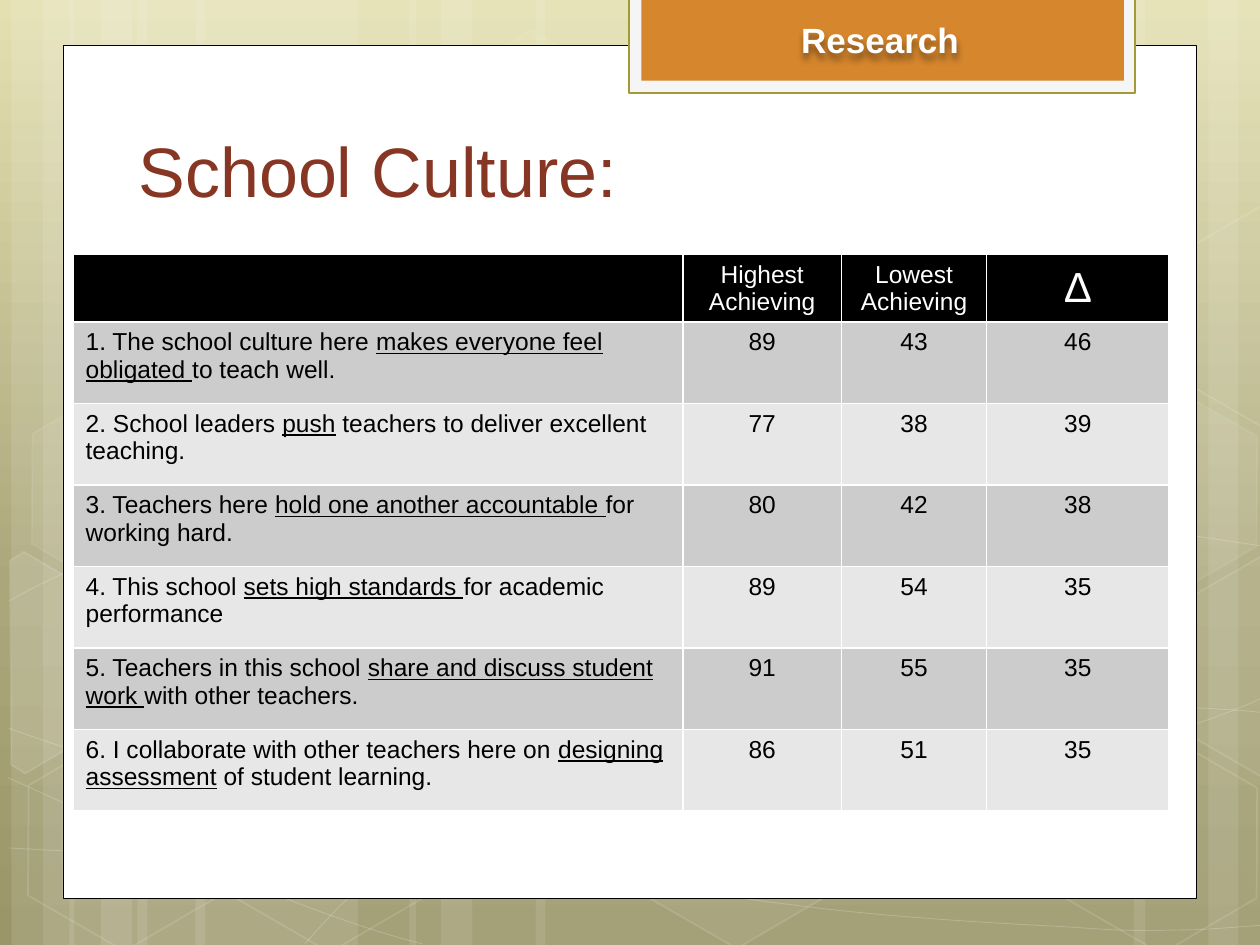
from copy import deepcopy

from lxml import etree
from pptx import Presentation
from pptx.dml.color import RGBColor
from pptx.enum.shapes import MSO_SHAPE
from pptx.enum.text import MSO_ANCHOR, MSO_AUTO_SIZE, PP_ALIGN
from pptx.oxml.ns import qn
from pptx.util import Inches, Pt

RECTANGLE, HEXAGON = MSO_SHAPE.RECTANGLE, MSO_SHAPE.HEXAGON
LEFT, CENTER = PP_ALIGN.LEFT, PP_ALIGN.CENTER
MIDDLE, BOTTOM = MSO_ANCHOR.MIDDLE, MSO_ANCHOR.BOTTOM
NO_AUTOFIT = MSO_AUTO_SIZE.NONE
FONT = "Arial"
WHITE, BLACK = "FFFFFF", "000000"
BANDS = ("CCCCCC", "E7E7E7")

SKY = ((0, "E4E0B2"), (0.62, "ABA77B"), (1, "9A9669"))
STRIPES = (
    (1.09, 1.75), (0.09, 0.5), (0.34, 0.83), (1.55, 1.75), (0.55, 0.5), (0.8, 0.83),
    (7.34, 1.75), (9.59, 0.5), (9, 0.83), (4.25, 3.09), (3.25, 0.5), (3.5, 0.83),
)
CURVES = (
    ((0.07, 6.73), (0.61, 6.76), (1.15, 6.79), (1.9, 6.78), (2.65, 6.77), (3.58, 6.75),
     (4.58, 6.65), (5.58, 6.55), (7, 6.36), (7.92, 6.17), (8.83, 5.98), (9.77, 5.68),
     (10.07, 5.51)),
    ((0.07, 4.77), (0.36, 4.61), (0.65, 4.46), (1.21, 4.31), (1.78, 4.16), (2.59, 3.94),
     (3.47, 3.87), (4.36, 3.8), (5.44, 3.79), (6.54, 3.87), (7.64, 3.95), (9.47, 4.26),
     (10.07, 4.34)),
    ((0.06, 6.17), (1.27, 6.72), (2.47, 7.27), (3.35, 7.49)),
    ((0.07, 5.78), (0.38, 5.89), (0.7, 6), (1.28, 6.16), (1.86, 6.31), (2.73, 6.56),
     (3.57, 6.73), (4.4, 6.9), (5.45, 7.08), (6.28, 7.18), (7.11, 7.29), (8, 7.33),
     (8.53, 7.36), (9.06, 7.4), (9.19, 7.38), (9.45, 7.38), (9.71, 7.37), (9.89, 7.35),
     (10.07, 7.34)),
    ((2.42, 7.49), (2.6, 7.29), (2.78, 7.09), (3.02, 6.91), (3.26, 6.72), (3.6, 6.53),
     (3.88, 6.39), (4.16, 6.25), (4.33, 6.19), (4.69, 6.09), (5.06, 5.99), (5.73, 5.85),
     (6.08, 5.78), (6.44, 5.71), (6.49, 5.71), (6.8, 5.69), (7.11, 5.66), (7.6, 5.63),
     (7.94, 5.62), (8.29, 5.61), (8.86, 5.62), (8.86, 5.62), (8.86, 5.62), (9.53, 5.62),
     (9.53, 5.62), (9.71, 5.63), (9.88, 5.64), (9.97, 5.65), (10.06, 5.66), (10.03, 5.65),
     (10.06, 5.66)),
)
HEXAGONS = (
    (3.34, 0.36, 4, 8), (4.97, 5.89, 6, 12), (0.11, 5.91, None, 12), (0.14, 3.12, 7, 8),
    (1.74, 5.92, None, 12), (7.53, 4.53, 10, 12), (8.34, 5.93, None, 12), (8.34, 3.14, 7, 8),
)
CUT_HEXAGONS = (
    (((0.08, 4.45), (0.19, 4.38), (0.96, 4.83), (0.95, 5.7), (0.2, 6.14), (0.09, 6.07)), 10),
    (((9.26, 4.85), (10.02, 4.41), (10.09, 4.46), (10.09, 6.13), (10.02, 6.17), (9.26, 5.73)), 4),
    (((9.26, 2.07), (10.02, 1.63), (10.1, 1.68), (10.09, 3.35), (10.02, 3.39), (9.26, 2.95)), None),
)
COLUMN_WIDTHS = (4.84, 1.26, 1.15, 1.45)
HEADER_HEIGHT, BODY_HEIGHT = 0.53, 3.88
HEADINGS = ("", "Highest\nAchieving", "Lowest\nAchieving", "∆")
FINDINGS = (
    (("1. The school culture here ", "makes everyone feel obligated ", "to teach well."), 89, 43, 46),
    (("2. School leaders ", "push", " teachers to deliver excellent teaching."), 77, 38, 39),
    (("3. Teachers here ", "hold one another accountable ", "for working hard."), 80, 42, 38),
    (("4. This school ", "sets high standards ", "for academic performance"), 89, 54, 35),
    (("5. Teachers in this school ", "share and discuss student work ", "with other teachers."), 91, 55, 35),
    (("6. I collaborate with other teachers here on ", "designing assessment", " of student learning."), 86, 51, 35),
)


def rgb(value):
    return RGBColor.from_string(value)


def set_opacity(shape, route, percent):
    color = shape.element.spPr.find("/".join(qn(tag) for tag in route))
    etree.SubElement(color, qn("a:alpha"), val=str(percent * 1000))


def paint(shape, fill=None, fill_opacity=100, line=None, width=1, line_opacity=100):
    shape.shadow.inherit = False
    if fill:
        shape.fill.solid()
        shape.fill.fore_color.rgb = rgb(fill)
        if fill_opacity < 100:
            set_opacity(shape, ("a:solidFill", "a:srgbClr"), fill_opacity)
    else:
        shape.fill.background()
    if line:
        shape.line.color.rgb = rgb(line)
        shape.line.width = Pt(width)
        if line_opacity < 100:
            set_opacity(shape, ("a:ln", "a:solidFill", "a:srgbClr"), line_opacity)
    else:
        shape.line.fill.background()


def add_preset(slide, kind, box, **look):
    shape = slide.shapes.add_shape(kind, *map(Inches, box))
    paint(shape, **look)
    return shape


def add_outline(slide, points, closed, **look):
    start, *rest = [(Inches(x), Inches(y)) for x, y in points]
    builder = slide.shapes.build_freeform(*start)
    builder.add_line_segments(rest, close=closed)
    outline = builder.convert_to_shape()
    paint(outline, **look)
    return outline


def add_curve(slide, points):
    curve = add_outline(slide, points, False, line=WHITE, width=0.5, line_opacity=20)
    segments = curve.element.findall(".//" + qn("a:lnTo"))
    for first in range(0, len(segments), 3):
        bezier = etree.SubElement(segments[first].getparent(), qn("a:cubicBezTo"))
        for segment in segments[first:first + 3]:
            bezier.append(segment[0])
            segment.getparent().remove(segment)


def style(paragraph, size, color, alignment=LEFT, bold=False):
    paragraph.alignment = alignment
    paragraph.font.name = FONT
    paragraph.font.size = Pt(size)
    paragraph.font.bold = bold
    paragraph.font.color.rgb = rgb(color)


def add_sky(slide):
    sky = slide.background.fill
    sky.gradient()
    sky.gradient_angle = 270
    stop_list = slide.element.find(".//" + qn("a:gsLst"))
    stop_list.append(deepcopy(stop_list[0]))
    for stop, (position, color) in zip(sky.gradient_stops, SKY):
        stop.position = position
        stop.color.rgb = rgb(color)


def add_backdrop(slide):
    add_sky(slide)
    for left, width in STRIPES:
        add_preset(slide, RECTANGLE, (left, 0, width, 7.5), fill=WHITE, fill_opacity=10)
    for points in CURVES:
        add_curve(slide, points)
    for left, top, opacity, edge in HEXAGONS:
        hexagon = add_preset(slide, HEXAGON, (left, top, 1.75, 1.52), fill=opacity and WHITE,
                             fill_opacity=opacity, line=WHITE, line_opacity=edge)
        hexagon.adjustments[0] = 0.285
        hexagon.rotation = 30
    for points, opacity in CUT_HEXAGONS:
        add_outline(slide, points, True, fill=opacity and WHITE, fill_opacity=opacity,
                    line=WHITE, line_opacity=12)
    add_preset(slide, RECTANGLE, (0.5, 0.36, 9, 6.77), fill=WHITE, line=BLACK, width=0.5)
    add_preset(slide, RECTANGLE, (4.99, -0.02, 4.02, 0.76), fill="F5F5F5", line="A39A36", width=1.25)
    add_preset(slide, RECTANGLE, (5.09, -0.04, 3.83, 0.68), fill="D6862D")


def fill_cell(cell, color):
    cell.fill.solid()
    cell.fill.fore_color.rgb = rgb(color)


def add_findings(slide):
    box = (0.58, 2.02, sum(COLUMN_WIDTHS), HEADER_HEIGHT + BODY_HEIGHT)
    table = slide.shapes.add_table(len(FINDINGS) + 1, len(COLUMN_WIDTHS), *map(Inches, box)).table
    for column, width in zip(table.columns, COLUMN_WIDTHS):
        column.width = Inches(width)
    for index, row in enumerate(table.rows):
        row.height = Inches(BODY_HEIGHT / len(FINDINGS) if index else HEADER_HEIGHT)
    for index, heading in enumerate(HEADINGS):
        cell = table.cell(0, index)
        fill_cell(cell, BLACK)
        cell.text = heading
        for paragraph in cell.text_frame.paragraphs:
            style(paragraph, 24 if heading == "∆" else 14, WHITE, CENTER)
            for run in paragraph.runs:
                run.font.bold = False
    table.cell(0, 3).vertical_anchor = MIDDLE
    for index, (statement, *scores) in enumerate(FINDINGS):
        cells = table.rows[index + 1].cells
        paragraph = cells[0].text_frame.paragraphs[0]
        for part, words in enumerate(statement):
            run = paragraph.add_run()
            run.text = words
            run.font.underline = part == 1
        for column, score in enumerate(scores, 1):
            cells[column].text = str(score)
        for column, cell in enumerate(cells):
            fill_cell(cell, BANDS[index % 2])
            style(cell.text_frame.paragraphs[0], 14, BLACK, CENTER if column else LEFT)


def add_banner_label(slide):
    label = slide.shapes.add_textbox(*map(Inches, (5.18, 0.1, 3.61, 0.44)))
    label.text_frame.word_wrap = True
    label.text_frame.text = "Research"
    style(label.text_frame.paragraphs[0], 20, WHITE, CENTER, bold=True)
    effects = etree.SubElement(label.element.spPr, qn("a:effectLst"))
    shadow = etree.SubElement(effects, qn("a:outerShdw"), blurRad="50800", dist="38100", dir="5400000")
    tint = etree.SubElement(shadow, qn("a:srgbClr"), val=BLACK)
    etree.SubElement(tint, qn("a:alpha"), val="40000")


def place_title(slide):
    title = slide.shapes.title
    title.left, title.top, title.width, title.height = map(Inches, (1, 1.03, 9, 0.71))
    frame = title.text_frame
    frame.text = "School Culture:"
    frame.vertical_anchor = BOTTOM
    frame.auto_size = NO_AUTOFIT
    style(frame.paragraphs[0], 40, "873624")
    frame.paragraphs[0].line_spacing = 0.9
    slide.shapes.element.append(title.element)


def main():
    deck = Presentation()
    deck.slide_width, deck.slide_height = Inches(10), Inches(7.5)
    slide = deck.slides.add_slide(deck.slide_layouts[5])
    add_backdrop(slide)
    add_findings(slide)
    add_banner_label(slide)
    place_title(slide)
    deck.save("out.pptx")


if __name__ == "__main__":
    main()
